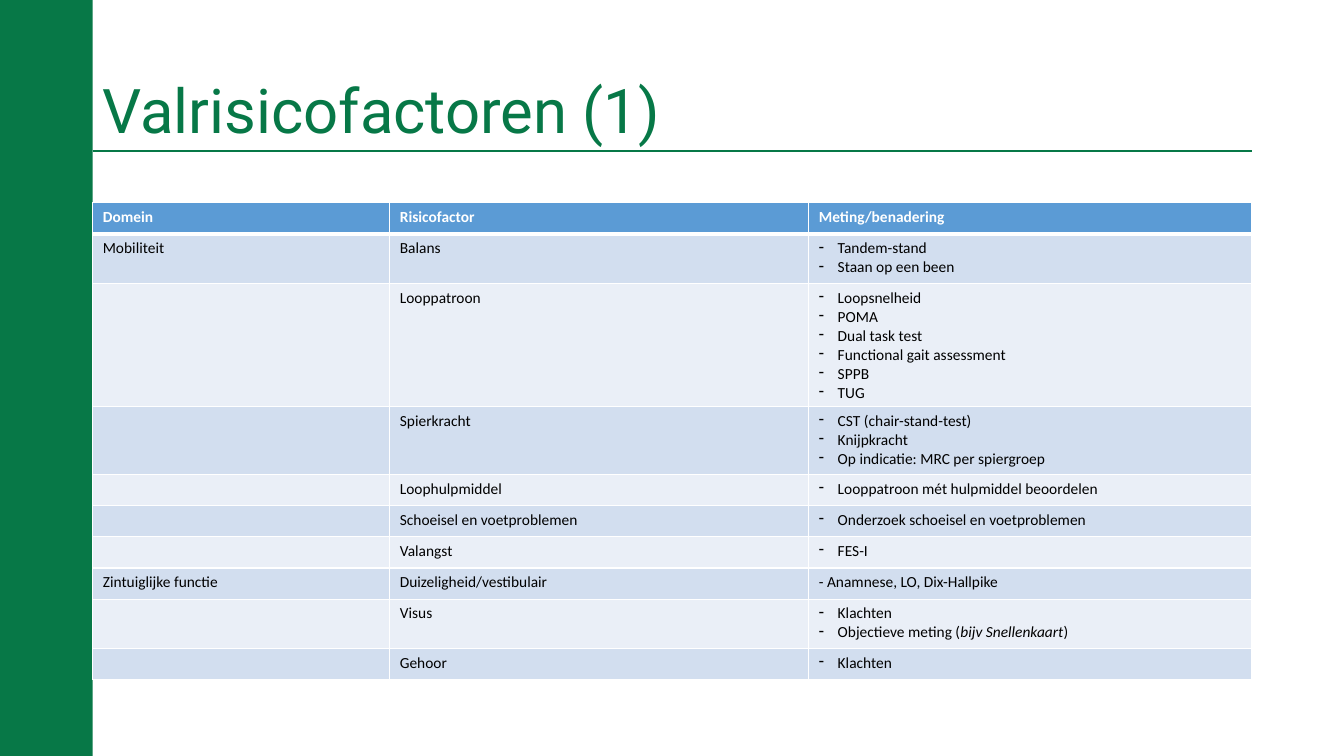
from lxml.etree import SubElement
from pptx import Presentation
from pptx.dml.color import RGBColor as Color
from pptx.enum.shapes import MSO_CONNECTOR as Connector, MSO_SHAPE as Shape
from pptx.enum.text import MSO_ANCHOR as Anchor
from pptx.oxml.ns import qn
from pptx.util import Pt

# Content: each row is domain, risk factor, measurements
TITLE = "Valrisicofactoren (1)"
HEADER = ("Domein", "Risicofactor", "Meting/benadering")
ROWS = [
    ("Mobiliteit", "Balans", ["Tandem-stand", "Staan op een been"]),
    ("", "Looppatroon", ["Loopsnelheid", "POMA", "Dual task test",
                         "Functional gait assessment", "SPPB", "TUG"]),
    ("", "Spierkracht", ["CST (chair-stand-test)", "Knijpkracht",
                         "Op indicatie: MRC per spiergroep"]),
    ("", "Loophulpmiddel", ["Looppatroon mét hulpmiddel beoordelen"]),
    ("", "Schoeisel en voetproblemen", ["Onderzoek schoeisel en voetproblemen"]),
    ("", "Valangst", ["FES-I"]),
    ("Zintuiglijke functie", "Duizeligheid/vestibulair", "- Anamnese, LO, Dix-Hallpike"),
    ("", "Visus", ["Klachten", ("Objectieve meting (", "bijv Snellenkaart", ")")]),
    ("", "Gehoor", ["Klachten"]),
]

COLORS = {"green": "077847", "header": "5B9BD5", "odd": "D2DEEF",
          "even": "EAEFF7", "white": "FFFFFF", "black": "000000"}
TITLE_FORMAT = {"name": "Roboto", "size": Pt(44)}
CELL_FORMAT = {"name": "Calibri", "size": Pt(11)}

# Layout in points
PAGE_WIDTH, PAGE_HEIGHT = 960, 540
LEFT, WIDTH = 66.24, 828
RULE_TOP, TABLE_TOP = 108, 144.9
COLUMN_WIDTHS = (212.2, 299.3, 316.5)
ROW_PADDING, LINE_HEIGHT = 9.2, 13.1
INDENT = 13.5


def color(name):
    return Color.from_string(COLORS[name])


def add_span(para, text, formats, color_name):
    span = para.add_run()
    span.text = text
    for key, value in formats.items():
        setattr(span.font, key, value)
    span.font.color.rgb = color(color_name)


def add_bullet(para):
    props = para._p.get_or_add_pPr()
    props.set("marL", str(Pt(INDENT)))
    props.set("indent", str(-Pt(INDENT)))
    SubElement(props, qn("a:buFontTx"))
    SubElement(props, qn("a:buChar"), char="-")


def add_borders(cell, widths):
    for side, width in widths.items():
        line = SubElement(cell._tc.get_or_add_tcPr(), qn(f"a:ln{side}"), w=str(Pt(width)))
        fill = SubElement(line, qn("a:solidFill"))
        SubElement(fill, qn("a:srgbClr"), val=COLORS["white"])


def fill_cell(cell, content, is_header):
    lines = content if isinstance(content, list) else [content]
    frame = cell.text_frame
    for number, line in enumerate(lines):
        para = frame.add_paragraph() if number else frame.paragraphs[0]
        if isinstance(content, list):
            add_bullet(para)
        if not line:
            SubElement(para._p, qn("a:endParaRPr"), sz="1100")
            continue
        # The middle part of a split line is italic
        for part, text in enumerate(line if isinstance(line, tuple) else (line,)):
            formats = {**CELL_FORMAT, "bold": is_header, "italic": part == 1}
            add_span(para, text, formats, "white" if is_header else "black")


deck = Presentation()
deck.slide_width, deck.slide_height = Pt(PAGE_WIDTH), Pt(PAGE_HEIGHT)
page = deck.slides.add_slide(deck.slide_layouts[6])

# Side band
band = page.shapes.add_shape(Shape.RECTANGLE, 0, 0, Pt(LEFT), Pt(PAGE_HEIGHT))
band.shadow.inherit = False
band.fill.solid()
band.fill.fore_color.rgb = color("green")
band.line.fill.background()

# Rule under the title
rule = page.shapes.add_connector(Connector.STRAIGHT, Pt(LEFT), Pt(RULE_TOP),
                                 Pt(LEFT + WIDTH), Pt(RULE_TOP))
rule.line.color.rgb = color("green")
rule.line.width = Pt(1.5)
SubElement(rule._element.spPr, qn("a:effectLst"))

# Title
box = page.shapes.add_textbox(Pt(LEFT), Pt(28.8), Pt(WIDTH), Pt(104.4))
box.text_frame.word_wrap = True
box.text_frame.vertical_anchor = Anchor.MIDDLE
title = box.text_frame.paragraphs[0]
title.line_spacing = 0.9
add_span(title, TITLE, TITLE_FORMAT, "green")

# Table of risk factors
records = [HEADER, *ROWS]
heights = [ROW_PADDING + LINE_HEIGHT * (len(record[2]) if isinstance(record[2], list) else 1)
           for record in records]
table = page.shapes.add_table(len(records), len(HEADER), Pt(LEFT), Pt(TABLE_TOP),
                              Pt(WIDTH), Pt(sum(heights))).table
for column, width in zip(table.columns, COLUMN_WIDTHS):
    column.width = Pt(width)
for index, (record, height) in enumerate(zip(records, heights)):
    table.rows[index].height = Pt(height)
    fill_name = "header" if index == 0 else "odd" if index % 2 else "even"
    for cell, content in zip(table.rows[index].cells, record):
        fill_cell(cell, content, index == 0)
        add_borders(cell, {"L": 1, "R": 1, "T": 3 if index == 1 else 1,
                           "B": 3 if index == 0 else 1})
        cell.fill.solid()
        cell.fill.fore_color.rgb = color(fill_name)

deck.save("out.pptx")
